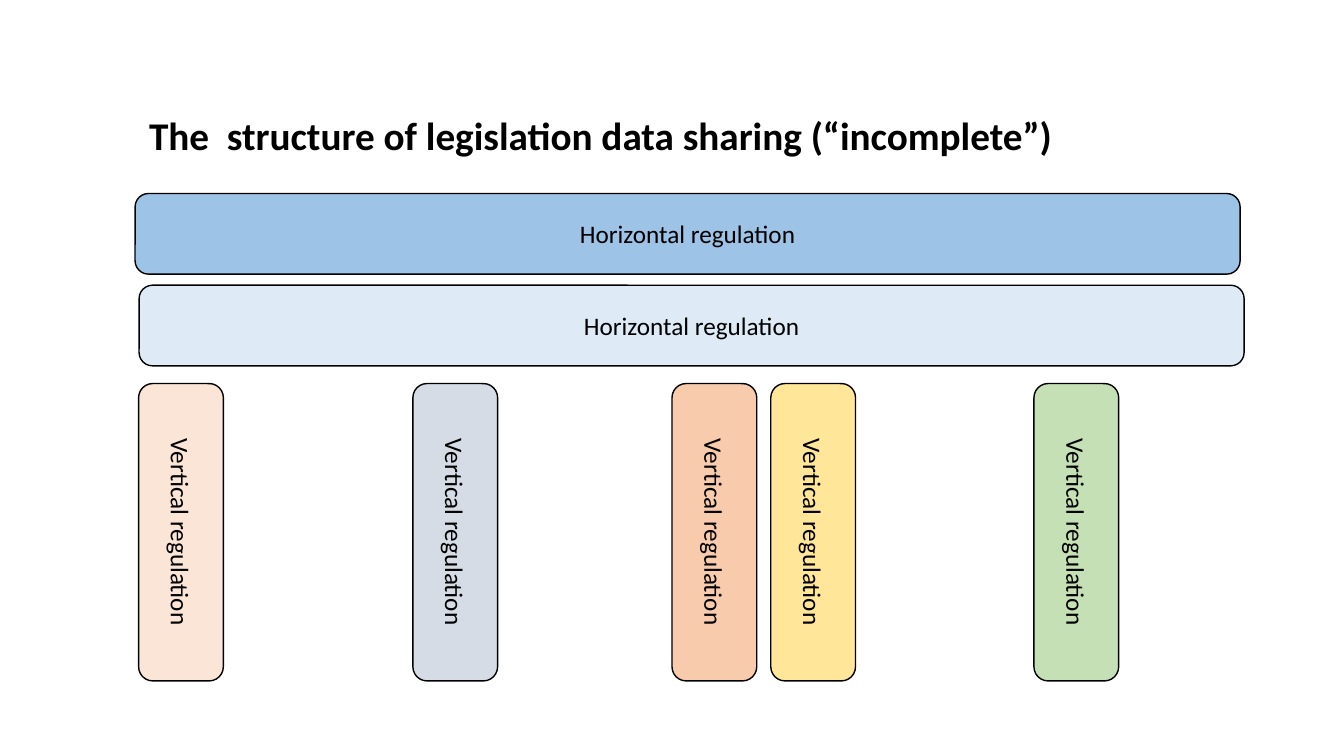
from dataclasses import dataclass

from pptx import Presentation
from pptx.dml.color import RGBColor
from pptx.enum.shapes import MSO_SHAPE
from pptx.enum.text import MSO_ANCHOR, MSO_AUTO_SIZE, PP_ALIGN
from pptx.util import Pt

SCALE = 9144  # EMU per px, 100 px to the inch


@dataclass(frozen=True)
class Theme:
    font: str = "Calibri"
    ink: str = "000000"
    title: int = 28
    label: int = 18
    rows: tuple = ("9DC3E6", "DEEBF7")
    columns: tuple = ("FBE5D6", "D6DCE5", "F8CBAD", "FFE699", "C5E0B4")


class Canvas:
    def __init__(self, slide, theme):
        self.slide = slide
        self.theme = theme

    def area(self, *px):
        return [n * SCALE for n in px]

    def label(self, frame, text, size, bold=False, align=PP_ALIGN.LEFT):
        frame.word_wrap = True
        para = frame.paragraphs[0]
        para.text = text
        para.alignment = align
        font = para.font
        font.name = self.theme.font
        font.size = Pt(size)
        font.bold = bold
        font.color.rgb = RGBColor.from_string(self.theme.ink)

    def title(self, text, *px):
        frame = self.slide.shapes.add_textbox(*self.area(*px)).text_frame
        frame.auto_size = MSO_AUTO_SIZE.SHAPE_TO_FIT_TEXT
        self.label(frame, text, self.theme.title, bold=True)

    def bar(self, text, fill, *px, turn=0):
        bar = self.slide.shapes.add_shape(
            MSO_SHAPE.ROUNDED_RECTANGLE, *self.area(*px))
        bar.rotation = turn
        bar.shadow.inherit = False
        bar.fill.solid()
        bar.fill.fore_color.rgb = RGBColor.from_string(fill)
        bar.line.color.rgb = RGBColor.from_string(self.theme.ink)
        bar.line.width = Pt(1)
        bar.text_frame.vertical_anchor = MSO_ANCHOR.MIDDLE
        self.label(bar.text_frame, text, self.theme.label,
                   align=PP_ALIGN.CENTER)


def main():
    deck = Presentation()
    deck.slide_width, deck.slide_height = 1333 * SCALE, 750 * SCALE
    theme = Theme()
    canvas = Canvas(deck.slides.add_slide(deck.slide_layouts[6]), theme)

    # Title
    canvas.title("The  structure of legislation data sharing (“incomplete”)",
                 138, 106, 1092, 57)

    # Horizontal rows
    for fill, left, top in zip(theme.rows, (134, 138), (192, 283)):
        canvas.bar("Horizontal regulation", fill, left, top, 1096, 80)

    # Vertical columns, turned a quarter clockwise
    for fill, left in zip(theme.columns, (32, 304, 561, 659, 920)):
        canvas.bar("Vertical regulation", fill, left, 486, 295, 84, turn=90)

    deck.save("out.pptx")


if __name__ == "__main__":
    main()
